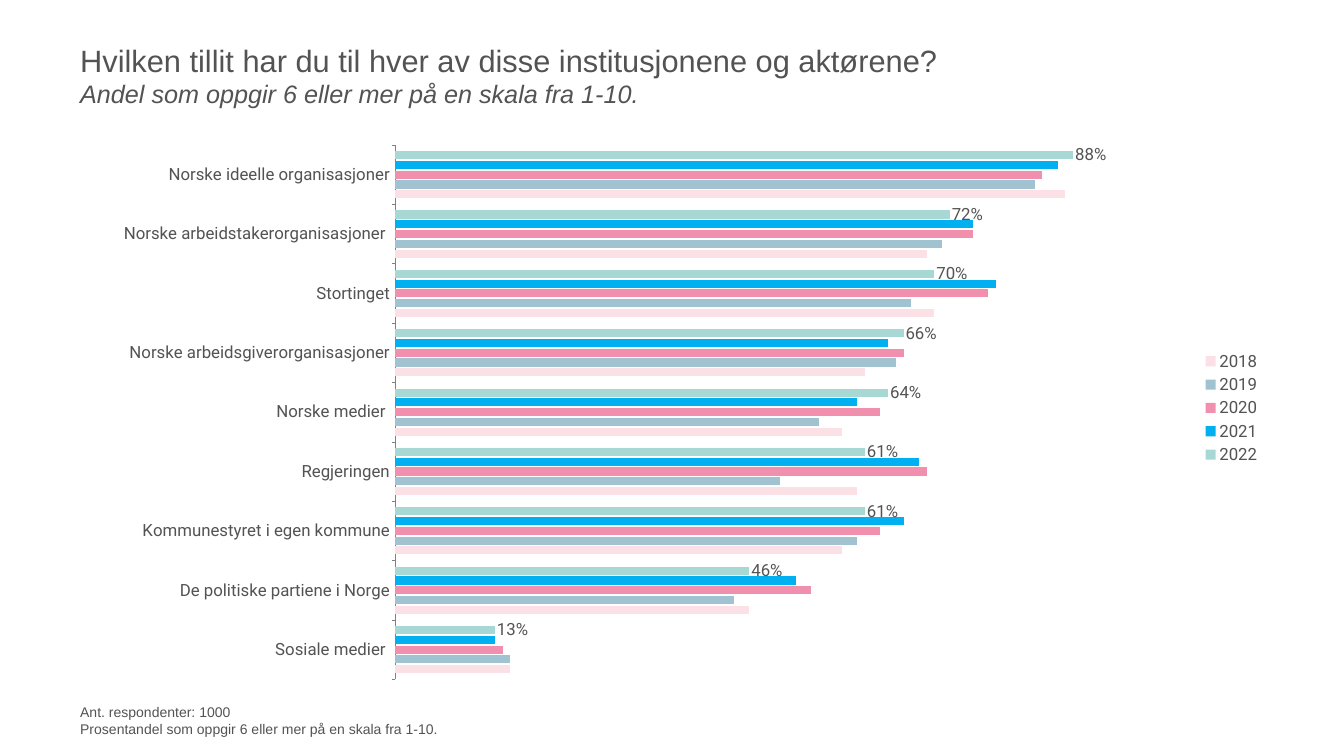
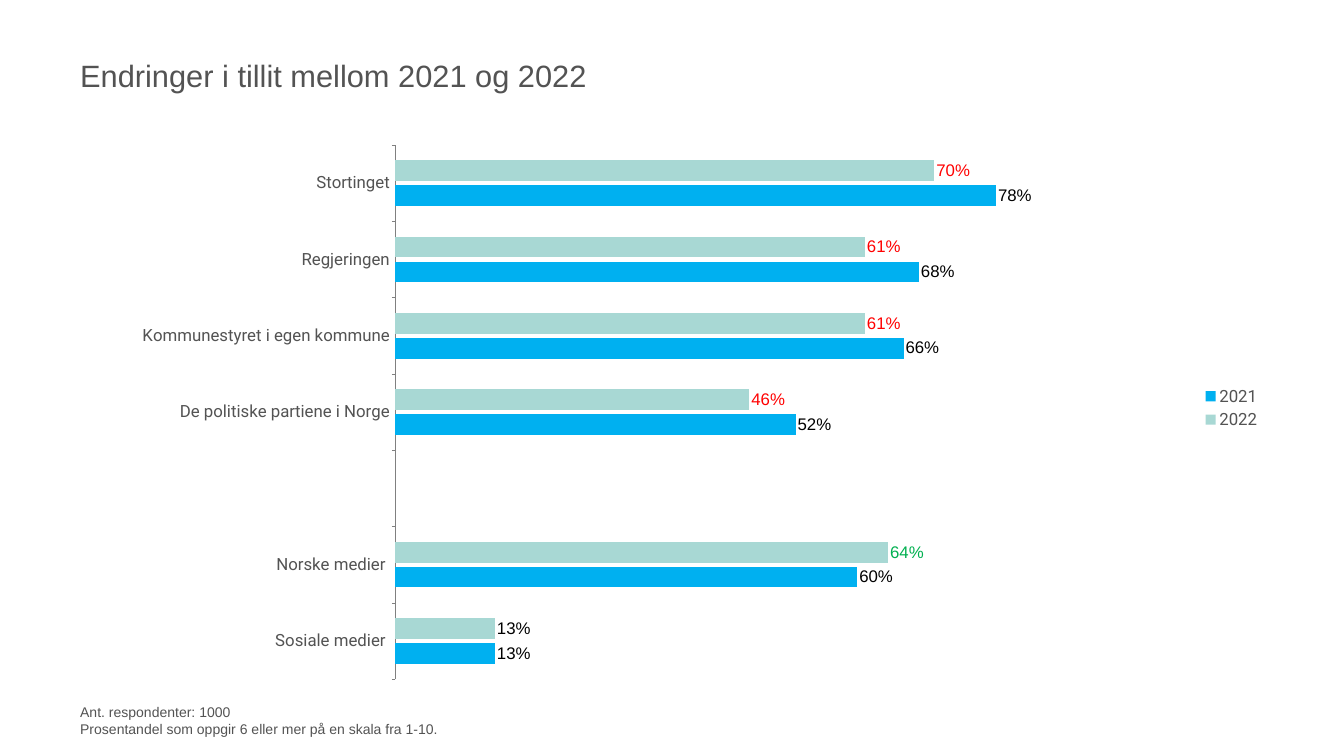
from lxml import etree
from pptx import Presentation
from pptx.chart.data import CategoryChartData
from pptx.dml.color import RGBColor
from pptx.enum.chart import XL_CHART_TYPE, XL_LABEL_POSITION, XL_LEGEND_POSITION, XL_TICK_MARK
from pptx.enum.text import MSO_ANCHOR
from pptx.oxml.ns import qn
from pptx.util import Inches, Pt

# Shared colours, fonts and enum members
GREY = RGBColor(0x53, 0x53, 0x53)
AXIS_GREY = RGBColor(0x80, 0x80, 0x80)
BLACK = RGBColor(0x00, 0x00, 0x00)
RED = RGBColor(0xFF, 0x00, 0x00)
GREEN = RGBColor(0x00, 0xB0, 0x50)
YEAR_COLORS = {
    "2022": RGBColor(0xA8, 0xD8, 0xD4),
    "2021": RGBColor(0x00, 0xB0, 0xF0),
    "2020": RGBColor(0xF1, 0x90, 0xAE),
    "2019": RGBColor(0xA1, 0xC2, 0xD0),
    "2018": RGBColor(0xFB, 0xE1, 0xE5),
}
TEXT_FONT, CHART_FONT = "Arial", "Roboto"
BAR_CLUSTERED = XL_CHART_TYPE.BAR_CLUSTERED
OUTSIDE_END = XL_LABEL_POSITION.OUTSIDE_END
LEGEND_RIGHT = XL_LEGEND_POSITION.RIGHT
TICK_OUTSIDE, TICK_NONE = XL_TICK_MARK.OUTSIDE, XL_TICK_MARK.NONE
MIDDLE = MSO_ANCHOR.MIDDLE

prs = Presentation()
prs.slide_width, prs.slide_height = Inches(26.67), Inches(15)

# Shared column and row lines, in percent of the slide
LEFT = int(prs.slide_width * 5.74 / 100)
WIDTH = prs.slide_width - 2 * LEFT
TITLE_TOP, CHART_TOP, FOOTER_TOP, FOOTER_END = [
    int(prs.slide_height * share / 100) for share in (3.13, 16.73, 91.2, 97.2)]
INSET = Inches(0.06)
PLOT_SHARES = {"x": 26.7, "y": 3.3, "w": 64.8, "h": 94.9}

FOOTER = [("Ant. respondenter: 1000", 20, False),
          ("Prosentandel som oppgir 6 eller mer på en skala fra 1-10.", 20, False)]

# Content: title lines, categories, shares per year, label styles per year
SLIDES = [
    {
        "title": [("Hvilken tillit har du til hver av disse institusjonene og aktørene?", 44, False),
                  ("Andel som oppgir 6 eller mer på en skala fra 1-10.", 36, True)],
        "categories": ["Norske ideelle organisasjoner", "Norske arbeidstakerorganisasjoner ",
                       "Stortinget", "Norske arbeidsgiverorganisasjoner", "Norske medier ",
                       "Regjeringen", "Kommunestyret i egen kommune",
                       "De politiske partiene i Norge", "Sosiale medier "],
        "years": {
            "2022": [0.88, 0.72, 0.70, 0.66, 0.64, 0.61, 0.61, 0.46, 0.13],
            "2021": [0.86, 0.75, 0.78, 0.64, 0.60, 0.68, 0.66, 0.52, 0.13],
            "2020": [0.84, 0.75, 0.77, 0.66, 0.63, 0.69, 0.63, 0.54, 0.14],
            "2019": [0.83, 0.71, 0.67, 0.65, 0.55, 0.50, 0.60, 0.44, 0.15],
            "2018": [0.87, 0.69, 0.70, 0.61, 0.58, 0.60, 0.58, 0.46, 0.15],
        },
        "labels": {"2022": (CHART_FONT, GREY)},
        "exceptions": {},
    },
    {
        "title": [("Endringer i tillit mellom 2021 og 2022", 44, False)],
        "categories": ["Stortinget", "Regjeringen", "Kommunestyret i egen kommune",
                       "De politiske partiene i Norge", "", "Norske medier ", "Sosiale medier "],
        "years": {
            "2022": [0.70, 0.61, 0.61, 0.46, None, 0.64, 0.13],
            "2021": [0.78, 0.68, 0.66, 0.52, None, 0.60, 0.13],
        },
        "labels": {"2022": (TEXT_FONT, RED), "2021": (TEXT_FONT, BLACK)},
        "exceptions": {5: GREEN, 6: BLACK},  # rise and no change in 2022
    },
]


def style_font(font, name, size, color):
    font.name, font.size = name, Pt(size)
    font.color.rgb = color


def add_lines(slide, top, bottom, lines, inset_top=INSET):
    frame = slide.shapes.add_textbox(LEFT, top, WIDTH, bottom - top).text_frame
    frame.word_wrap = True
    frame.vertical_anchor = MIDDLE
    frame.margin_left = frame.margin_right = frame.margin_bottom = INSET
    frame.margin_top = inset_top
    frame.text = "\n".join(text for text, _, _ in lines)
    for paragraph, (_, size, italic) in zip(frame.paragraphs, lines):
        style_font(paragraph.font, TEXT_FONT, size, GREY)
        paragraph.font.italic = italic


for content in SLIDES:
    slide = prs.slides.add_slide(prs.slide_layouts[6])

    # Title and footer
    add_lines(slide, TITLE_TOP, CHART_TOP, content["title"])
    add_lines(slide, FOOTER_TOP, FOOTER_END, FOOTER, inset_top=Inches(0.38))

    # Trust per institution and year
    trust = CategoryChartData(number_format="0%")
    trust.categories = content["categories"]
    for year, shares in content["years"].items():
        trust.add_series(year, shares)
    chart = slide.shapes.add_chart(BAR_CLUSTERED, LEFT, CHART_TOP, WIDTH,
                                   FOOTER_TOP - CHART_TOP, trust).chart
    chart.has_title = False
    style_font(chart.font, TEXT_FONT, 10, BLACK)

    # Legend
    chart.has_legend = True
    chart.legend.position = LEGEND_RIGHT
    chart.legend.include_in_layout = False
    style_font(chart.legend.font, CHART_FONT, 24, GREY)

    # Axes
    institutions = chart.category_axis
    institutions.reverse_order = True
    institutions.major_tick_mark, institutions.minor_tick_mark = TICK_OUTSIDE, TICK_NONE
    institutions.format.line.color.rgb = AXIS_GREY
    institutions.format.line.width = Pt(0.75)
    style_font(institutions.tick_labels.font, CHART_FONT, 24, GREY)
    percent = chart.value_axis
    percent.minimum_scale, percent.maximum_scale = 0, 1
    percent.has_major_gridlines = False
    percent.visible = False

    # Bars and value labels
    plot = chart.plots[0]
    plot.vary_by_categories = False
    plot.gap_width, plot.overlap = 150, -20
    for series in plot.series:
        series.format.fill.solid()
        series.format.fill.fore_color.rgb = YEAR_COLORS[series.name]
        if series.name in content["labels"]:
            font_name, color = content["labels"][series.name]
            labels = series.data_labels
            labels.show_value = True
            labels.number_format, labels.number_format_is_linked = "0%", False
            labels.position = OUTSIDE_END
            style_font(labels.font, font_name, 24, color)
    for index, color in content["exceptions"].items():
        label = plot.series[0].points[index].data_label
        style_font(label.font, TEXT_FONT, 24, color)
        label.position = OUTSIDE_END

    # Fixed inner plot area
    plot_area = chart.element.find(".//" + qn("c:plotArea"))
    for automatic in plot_area.findall(qn("c:layout")):
        plot_area.remove(automatic)
    layout = etree.Element(qn("c:layout"))
    manual = etree.SubElement(layout, qn("c:manualLayout"))
    settings = [("layoutTarget", "inner"), ("xMode", "edge"), ("yMode", "edge")]
    settings += [(side, f"{share / 100:.3f}") for side, share in PLOT_SHARES.items()]
    for tag, value in settings:
        etree.SubElement(manual, qn("c:" + tag)).set("val", value)
    plot_area.insert(0, layout)

prs.save("out.pptx")
